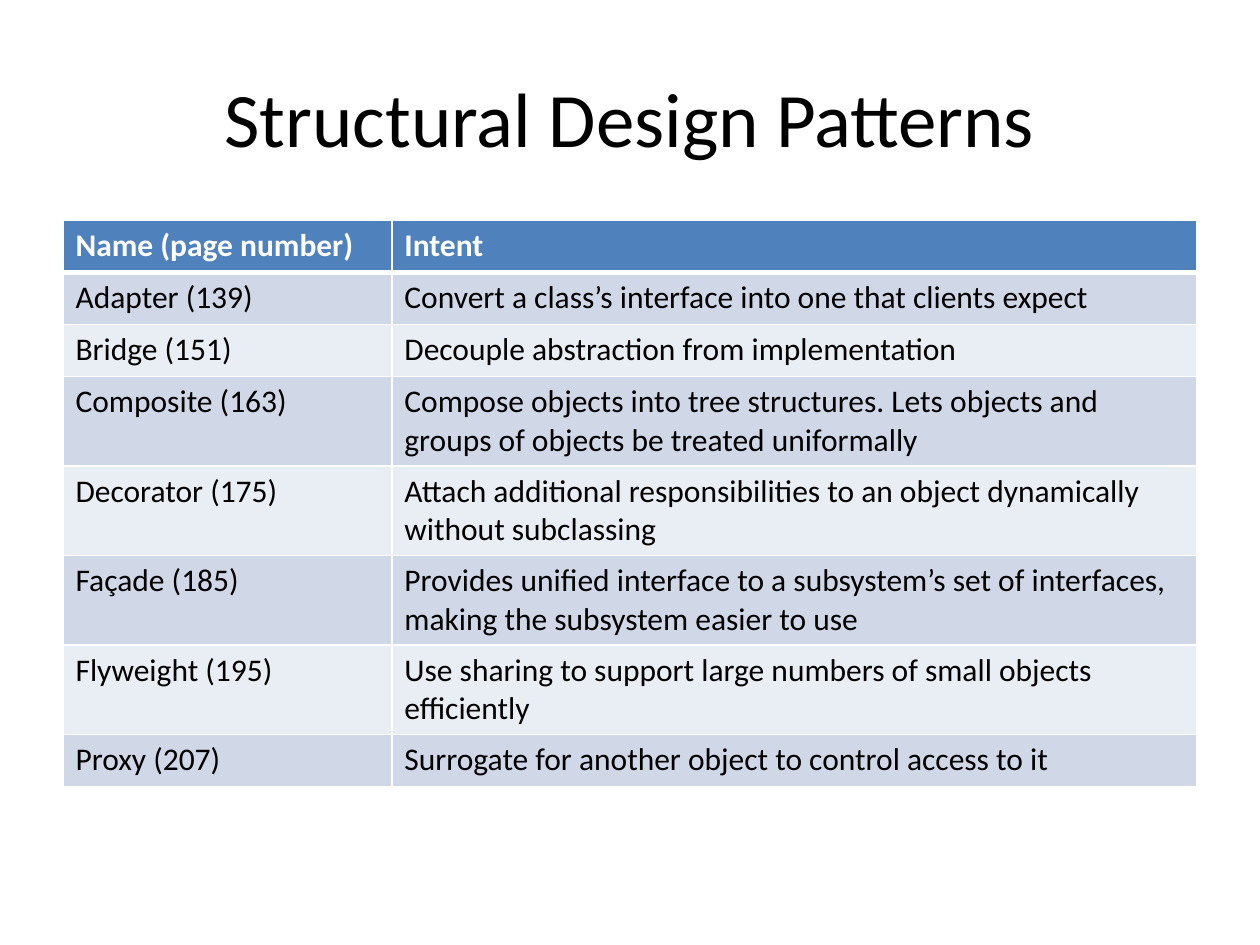
from dataclasses import dataclass

from lxml import etree
from pptx import Presentation
from pptx import util as u
from pptx.dml.color import RGBColor
from pptx.enum import text
from pptx.oxml import ns


@dataclass(frozen=True)
class Theme:
    """Colours, font and sizes of the deck."""
    font: str = "Calibri"
    ink: str = "000000"
    paper: str = "FFFFFF"
    header: str = "4F81BD"
    bands: tuple = ("D0D8E8", "E9EDF4")
    title_size: int = 44
    body_size: int = 18
    rule: int = 1
    header_rule: int = 3


THEME = Theme()
WIDTH, HEIGHT = u.Inches(10), u.Inches(7.5)
TITLE_BOX = (0.05, 0.04, 0.9, 1 / 6)
TABLE_BOX = (0.05, 7 / 30, 0.9, 0.44)
COLUMN_SHARES = (0.29, 0.71)
ROWS = [
    ("Name (page number)", "Intent"),
    ("Adapter (139)", "Convert a class’s interface into one that clients expect"),
    ("Bridge (151)", "Decouple abstraction from implementation"),
    ("Composite (163)", "Compose objects into tree structures. Lets objects and "
     "groups of objects be treated uniformally"),
    ("Decorator (175)", "Attach additional responsibilities to an object "
     "dynamically without subclassing"),
    ("Façade (185)", "Provides unified interface to a subsystem’s set of "
     "interfaces, making the subsystem easier to use"),
    ("Flyweight (195)", "Use sharing to support large numbers of small objects "
     "efficiently"),
    ("Proxy (207)", "Surrogate for another object to control access to it"),
]


def place(box):
    """Turn shares of the slide into left, top, width and height."""
    left, top, width, height = box
    return (round(left * WIDTH), round(top * HEIGHT),
            round(width * WIDTH), round(height * HEIGHT))


def write(frame, words, size=THEME.body_size, color=THEME.ink, bold=False,
          align=text.PP_ALIGN.LEFT):
    """Write one formatted paragraph into a text frame."""
    para = frame.paragraphs[0]
    para.alignment = align
    span = para.add_run()
    span.text = words
    span.font.name = THEME.font
    span.font.size = u.Pt(size)
    span.font.bold = bold
    span.font.color.rgb = RGBColor.from_string(color)


def add_border(cell, side, points):
    """Draw a solid rule on one side of a cell."""
    line = etree.SubElement(cell._tc.get_or_add_tcPr(), ns.qn(f"a:ln{side}"),
                            w=str(u.Pt(points)))
    fill = etree.SubElement(line, ns.qn("a:solidFill"))
    etree.SubElement(fill, ns.qn("a:srgbClr"), val=THEME.paper)


def fill_title(page, words, box):
    """Place and format the title placeholder."""
    title = page.shapes.title
    title.left, title.top, title.width, title.height = place(box)
    title.text_frame.vertical_anchor = text.MSO_ANCHOR.MIDDLE
    write(title.text_frame, words, size=THEME.title_size,
          align=text.PP_ALIGN.CENTER)


def style_cell(cell, row, words):
    """Write, rule and fill one cell according to its row."""
    is_header = row == 0
    write(cell.text_frame, words, bold=is_header,
          color=THEME.paper if is_header else THEME.ink)
    widths = {"L": THEME.rule, "R": THEME.rule,
              "T": THEME.header_rule if row == 1 else THEME.rule,
              "B": THEME.header_rule if is_header else THEME.rule}
    for side, points in widths.items():
        add_border(cell, side, points)
    cell.fill.solid()
    color = THEME.header if is_header else THEME.bands[(row - 1) % 2]
    cell.fill.fore_color.rgb = RGBColor.from_string(color)


def add_pattern_table(page, rows, box):
    """Build the table of patterns with a header and banded rows."""
    left, top, width, height = place(box)
    table = page.shapes.add_table(len(rows), len(COLUMN_SHARES),
                                  left, top, width, height).table
    for column, share in zip(table.columns, COLUMN_SHARES):
        column.width = round(width * share)
    for row, entries in enumerate(rows):
        for column, words in enumerate(entries):
            style_cell(table.cell(row, column), row, words)


def main():
    """Build and save the deck."""
    deck = Presentation()
    deck.slide_width, deck.slide_height = WIDTH, HEIGHT
    page = deck.slides.add_slide(deck.slide_layouts.get_by_name("Title Only"))
    fill_title(page, "Structural Design Patterns", TITLE_BOX)
    add_pattern_table(page, ROWS, TABLE_BOX)
    deck.save("out.pptx")


if __name__ == "__main__":
    main()
